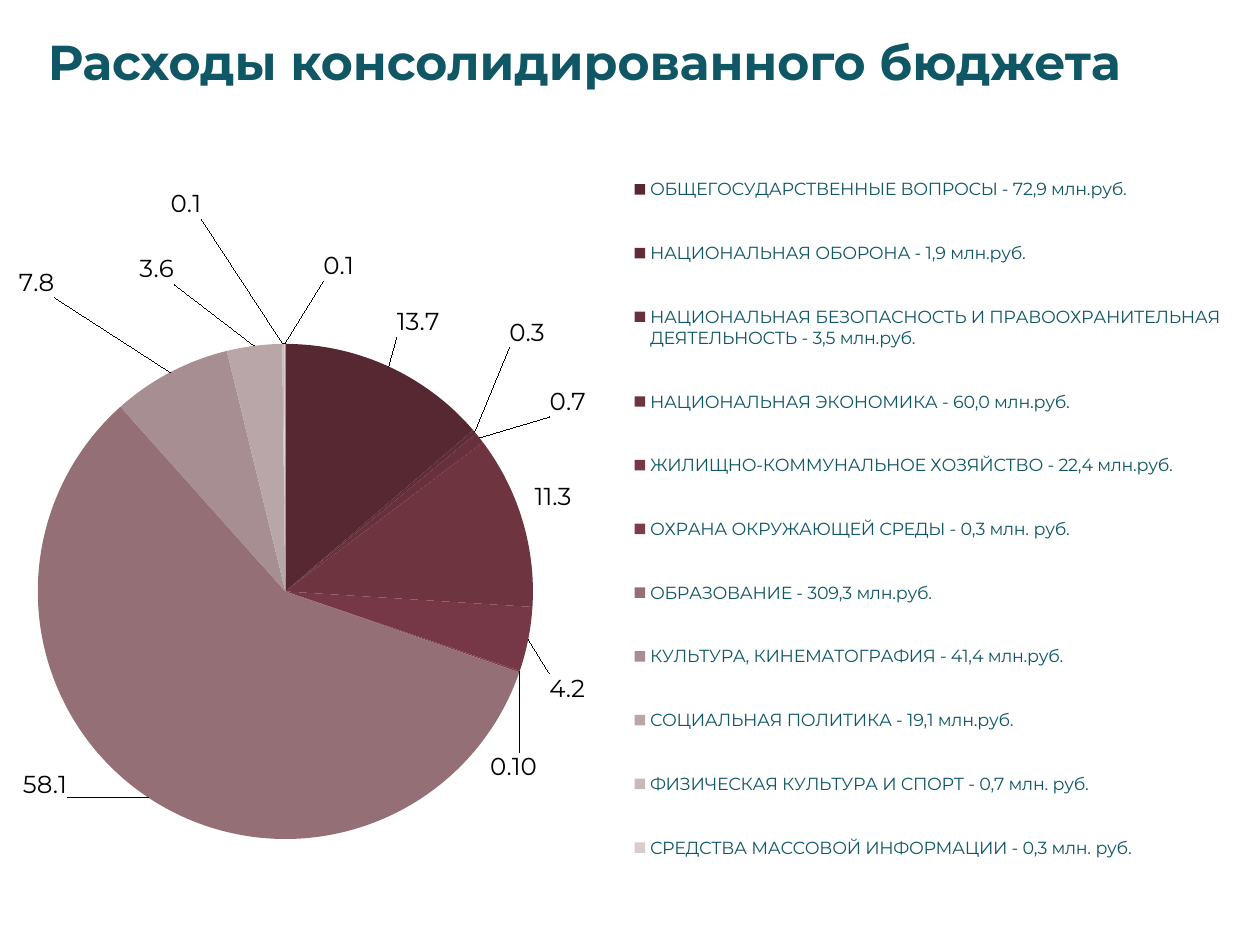
from pptx import Presentation
from pptx.chart.data import CategoryChartData
from pptx.dml.color import RGBColor
from pptx.enum.chart import XL_CHART_TYPE, XL_LABEL_POSITION, XL_LEGEND_POSITION
from pptx.enum.text import MSO_ANCHOR, PP_ALIGN
from pptx.oxml import parse_xml
from pptx.oxml.ns import nsdecls, qn
from pptx.util import Inches, Pt

FONT = "Montserrat"
TEAL = RGBColor(0x10, 0x57, 0x66)
BLACK = RGBColor(0, 0, 0)
TITLE = "Расходы консолидированного бюджета"
CHART_W, CHART_H = 10, 6.42
PLOT_BOX = (0.11, 1.81, 4.31, 3.93)
LEGEND_BOX = (4.92, 0.16, 4.88, 6.07)

# category, share, slice colour, label offset in inches
EXPENSES = [
    ("ОБЩЕГОСУДАРСТВЕННЫЕ ВОПРОСЫ - 72,9 млн.руб.", 13.7, RGBColor(0x56, 0x28, 0x31), (0.04, -0.18)),
    ("НАЦИОНАЛЬНАЯ ОБОРОНА - 1,9 млн.руб.", 0.3, RGBColor(0x5F, 0x2C, 0x37), (0.23, -0.63)),
    ("НАЦИОНАЛЬНАЯ БЕЗОПАСНОСТЬ И ПРАВООХРАНИТЕЛЬНАЯ ДЕЯТЕЛЬНОСТЬ - 3,5 млн.руб.", 0.7,
     RGBColor(0x67, 0x30, 0x3C), (0.51, -0.13)),
    ("НАЦИОНАЛЬНАЯ ЭКОНОМИКА - 60,0 млн.руб.", 11.3, RGBColor(0x6E, 0x34, 0x40), (0.04, -0.05)),
    ("ЖИЛИЩНО-КОММУНАЛЬНОЕ ХОЗЯЙСТВО - 22,4 млн.руб.", 4.2, RGBColor(0x76, 0x37, 0x46), (0.11, 0.26)),
    ("ОХРАНА ОКРУЖАЮЩЕЙ СРЕДЫ - 0,3 млн. руб.", 0.1, RGBColor(0x7D, 0x3C, 0x4A), (-0.29, 0.62)),
    ("ОБРАЗОВАНИЕ - 309,3 млн.руб.", 58.1, RGBColor(0x95, 0x6F, 0x76), (-0.61, -0.27)),
    ("КУЛЬТУРА, КИНЕМАТОГРАФИЯ - 41,4 млн.руб.", 7.8, RGBColor(0xA6, 0x8E, 0x92), (-0.89, -0.54)),
    ("СОЦИАЛЬНАЯ ПОЛИТИКА - 19,1 млн.руб.", 3.6, RGBColor(0xB8, 0xA6, 0xA8), (-0.63, -0.43)),
    ("ФИЗИЧЕСКАЯ КУЛЬТУРА И СПОРТ - 0,7 млн. руб.", 0.1, RGBColor(0xC9, 0xB9, 0xBB), (-0.77, -0.93)),
    ("СРЕДСТВА МАССОВОЙ ИНФОРМАЦИИ - 0,3 млн. руб.", 0.1, RGBColor(0xD8, 0xCC, 0xCD), (0.43, -0.44)),
]
TWO_DECIMALS = 5


def layout_xml(box, modes=""):
    """Return a manual chart layout for a position, with a size if given."""
    sizes = (CHART_W, CHART_H, CHART_W, CHART_H)
    parts = "".join(f'<c:{tag} val="{length / size:.4f}"/>'
                    for tag, length, size in zip("xywh", box, sizes))
    return parse_xml(f'<c:layout {nsdecls("c")}><c:manualLayout>{modes}{parts}'
                     '</c:manualLayout></c:layout>')


def style(font, size, color):
    """Set the typeface, size and colour of a font."""
    font.name, font.size, font.color.rgb = FONT, Pt(size), color


def add_title(s):
    """Fill and place the slide title."""
    title = s.shapes.title
    title.left, title.top, title.width, title.height = map(Inches, (0.28, 0.2, 9.68, 0.57))
    tf = title.text_frame
    tf.text = TITLE
    tf.vertical_anchor = MSO_ANCHOR.MIDDLE
    p = tf.paragraphs[0]
    p.alignment = PP_ALIGN.LEFT
    style(p.runs[0].font, 28, TEAL)
    p.runs[0].font.bold = True


def add_expense_pie(s):
    """Add the pie with its legend and its moved labels."""
    data = CategoryChartData()
    data.categories = [row[0] for row in EXPENSES]
    data.add_series("Series 1", [row[1] for row in EXPENSES])
    chart = s.shapes.add_chart(XL_CHART_TYPE.PIE, 0, Inches(0.92),
                               Inches(CHART_W), Inches(CHART_H), data).chart
    style(chart.font, 10, BLACK)
    chart.has_title = False
    chart.has_legend = True
    legend = chart.legend
    legend.position = XL_LEGEND_POSITION.LEFT
    legend.include_in_layout = False
    style(legend.font, 10, TEAL)

    plot = chart.plots[0]
    plot.vary_by_categories = True
    series = plot.series[0]
    labels = series.data_labels
    labels.show_value = True
    labels.number_format = "#,##0.0"
    labels.number_format_is_linked = False
    labels.position = XL_LABEL_POSITION.OUTSIDE_END
    style(labels.font, 14, BLACK)

    for i, (_, _, color, _) in enumerate(EXPENSES):
        point = series.points[i]
        point.format.fill.solid()
        point.format.fill.fore_color.rgb = color
        label = point.data_label
        label.position = XL_LABEL_POSITION.OUTSIDE_END
        style(label.font, 14, BLACK)

    space = chart._chartSpace
    for i, label in enumerate(space.iter(qn("c:dLbl"))):
        code = "#,##0.00" if i == TWO_DECIMALS else "#,##0.0"
        label.insert(1, layout_xml(EXPENSES[i][3]))
        label.insert(2, parse_xml(f'<c:numFmt {nsdecls("c")} formatCode="{code}" sourceLinked="0"/>'))

    edges = '<c:xMode val="edge"/><c:yMode val="edge"/>'
    for tag, box, index, modes in (
            ("c:plotArea", PLOT_BOX, 0, '<c:layoutTarget val="inner"/>' + edges),
            ("c:legend", LEGEND_BOX, 1, edges)):
        part = next(space.iter(qn(tag)))
        for old in part.findall(qn("c:layout")):
            part.remove(old)
        part.insert(index, layout_xml(box, modes))


def main():
    """Build the expenses slide."""
    prs = Presentation()
    prs.slide_width, prs.slide_height = Inches(10), Inches(7.5)
    s = prs.slides.add_slide(prs.slide_layouts[5])
    add_expense_pie(s)
    add_title(s)
    prs.save("out.pptx")


if __name__ == "__main__":
    main()
